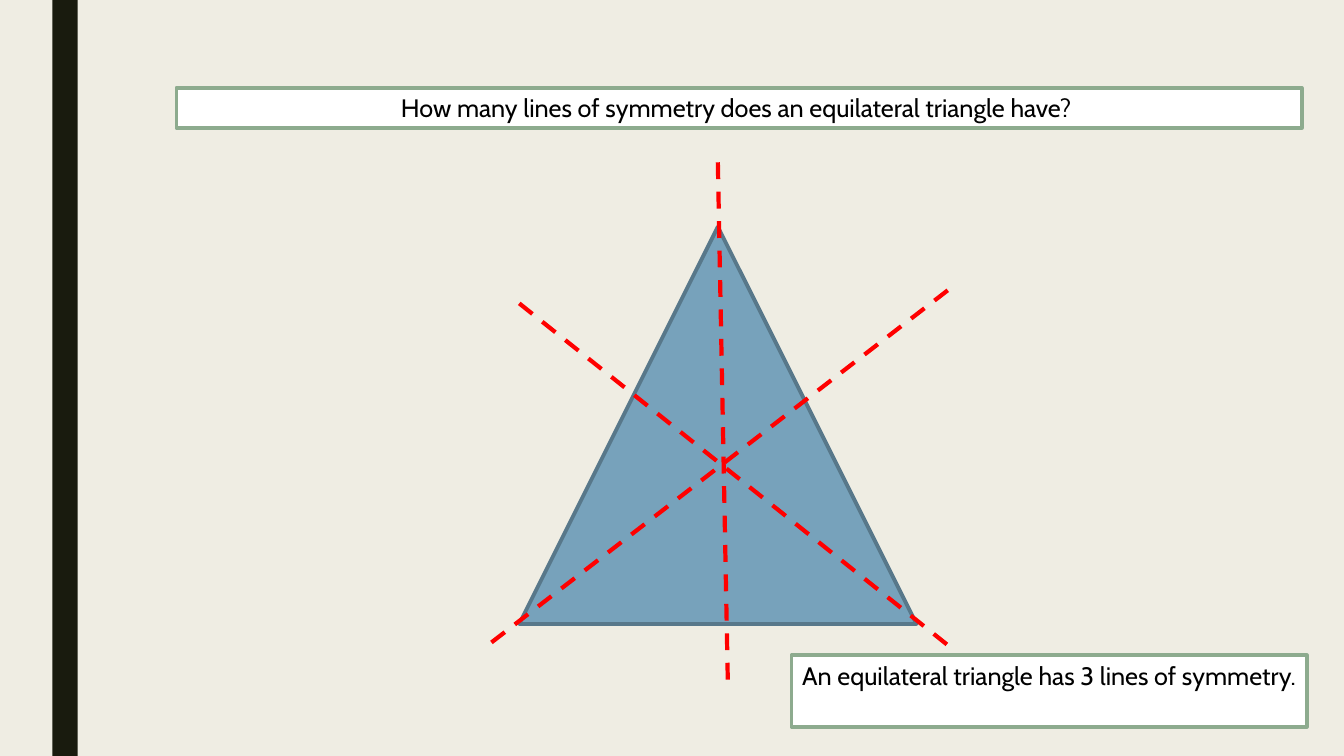
from lxml import etree
from pptx import Presentation
from pptx.dml.color import RGBColor
from pptx.enum.dml import MSO_LINE
from pptx.enum.shapes import MSO_CONNECTOR, MSO_SHAPE
from pptx.enum.text import MSO_ANCHOR, MSO_AUTO_SIZE, PP_ALIGN
from pptx.oxml.ns import qn
from pptx.util import Inches, Pt

RECTANGLE = MSO_SHAPE.RECTANGLE
TRIANGLE = MSO_SHAPE.ISOSCELES_TRIANGLE
STRAIGHT = MSO_CONNECTOR.STRAIGHT
DASH = MSO_LINE.DASH
TOP = MSO_ANCHOR.TOP
CENTER = PP_ALIGN.CENTER
NO_AUTOFIT = MSO_AUTO_SIZE.NONE


def color(hex_string):
    return RGBColor.from_string(hex_string)


def paint(shape, fill, line=None):
    shape.fill.solid()
    shape.fill.fore_color.rgb = color(fill)
    if line:
        shape.line.color.rgb = color(line)
        shape.line.width = Pt(2.75)
    else:
        shape.line.fill.background()


presentation = Presentation()
presentation.slide_width = Inches(13.33)
presentation.slide_height = Inches(7.5)
slide = presentation.slides.add_slide(presentation.slide_layouts.get_by_name("Title Only"))
slide.background.fill.solid()
slide.background.fill.fore_color.rgb = color("EFEDE3")

side_bar = slide.shapes.add_shape(RECTANGLE, Inches(0.52), 0, Inches(0.25), presentation.slide_height)
side_bar.shadow.inherit = False
paint(side_bar, "191B0E")

triangle = slide.shapes.add_shape(TRIANGLE, Inches(5.15), Inches(2.25), Inches(3.94), Inches(3.94))
triangle.shadow.inherit = False
paint(triangle, "77A2BB", "58788A")

symmetry_lines = [
    (7.12, 1.61, 7.22, 6.82),
    (5.15, 3.01, 9.4, 6.4),
    (9.4, 2.88, 4.84, 6.4),
]
for ends in symmetry_lines:
    symmetry_line = slide.shapes.add_connector(STRAIGHT, *[Inches(length) for length in ends])
    symmetry_line.line.color.rgb = color("FF0000")
    symmetry_line.line.width = Pt(3)
    symmetry_line.line.dash_style = DASH
    etree.SubElement(symmetry_line._element.spPr, qn("a:effectLst"))

question = slide.shapes.title
answer = slide.shapes.add_textbox(0, 0, 0, 0)
captions = [
    (question, (1.75, 0.87, 11.16, 0.4), "How many lines of symmetry does an equilateral triangle have? "),
    (answer, (7.85, 6.5, 5.11, 0.71), "An equilateral triangle has 3 lines of symmetry."),
]
for box, place, wording in captions:
    box.left, box.top, box.width, box.height = [Inches(length) for length in place]
    paint(box, "FFFFFF", "8DAB8E")
    frame = box.text_frame
    frame.word_wrap = True
    frame.auto_size = NO_AUTOFIT
    frame.vertical_anchor = TOP
    paragraph = frame.paragraphs[0]
    paragraph.alignment = CENTER
    run = paragraph.add_run()
    run.text = wording
    run.font.name = "Cabin"
    run.font.size = Pt(18)
    run.font.color.rgb = color("000000")

presentation.save("out.pptx")
